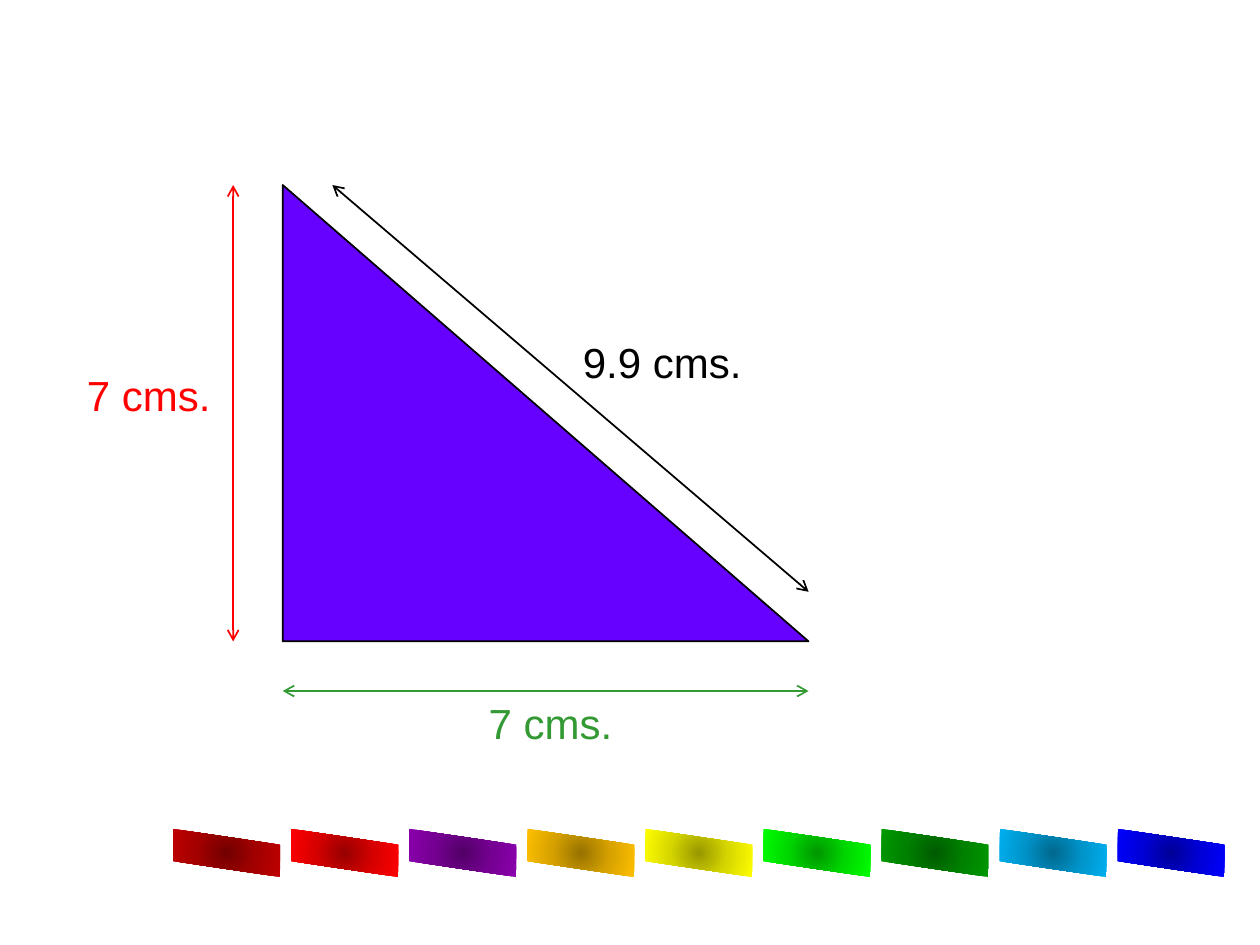
from lxml.etree import SubElement
from pptx import Presentation
from pptx.dml.color import RGBColor
from pptx.enum.shapes import MSO_CONNECTOR as CONN, MSO_SHAPE as SHAPE
from pptx.enum.text import MSO_AUTO_SIZE as AUTO
from pptx.oxml import parse_xml
from pptx.oxml.ns import nsdecls, qn
from pptx.util import Cm, Pt

COLORS = {"height": "FF0000", "base": "339933", "side": "000000",
          "triangle": "6600FF", "outline": "000000"}
# Centre, middle and edge colour of each tile
TILES = [("720000", "A20000", "C00000"), ("970000", "D70000", "FF0000"),
         ("520067", "750092", "8B00AD"), ("977200", "D7A200", "FFC000"),
         ("979700", "D7D700", "FFFF00"), ("009700", "00D700", "00FF00"),
         ("005B00", "008100", "009900"), ("00688E", "0094CA", "00B0F0"),
         ("000097", "0000D7", "0000FF")]
TILE_LEFT, TILE_TOP, TILE_PITCH = 3.49, 16.71, 2.38
TILE_WIDTH, TILE_HEIGHT, TILE_DROP = 2.16, 0.97, 0.32

LEFT, TOP, WIDTH, HEIGHT = 5.7, 3.73, 10.6, 9.2
RIGHT, BOTTOM = LEFT + WIDTH, TOP + HEIGHT
GAP = 1


def rgb(name):
    return RGBColor.from_string(COLORS[name])


def fill_radial(sp, colors):
    """Fill a shape with a gradient that runs from its centre to its edge."""
    stops = "".join(f'<a:gs pos="{i * 50000}"><a:srgbClr val="{c}"/></a:gs>'
                    for i, c in enumerate(colors))
    grad = parse_xml(
        f'<a:gradFill {nsdecls("a")} rotWithShape="1"><a:gsLst>{stops}</a:gsLst>'
        '<a:path path="circle"><a:fillToRect l="50000" t="50000" r="50000"'
        ' b="50000"/></a:path></a:gradFill>')
    sp.fill.background()
    props = sp._element.spPr
    props.replace(props.find(qn("a:noFill")), grad)


def add_tile(s, left, colors):
    right, bottom = left + TILE_WIDTH, TILE_TOP + TILE_HEIGHT - TILE_DROP
    builder = s.shapes.build_freeform(Cm(left), Cm(TILE_TOP))
    corners = [(right, TILE_TOP + TILE_DROP), (right, bottom + TILE_DROP),
               (left, bottom)]
    builder.add_line_segments([(Cm(x), Cm(y)) for x, y in corners], close=True)
    sp = builder.convert_to_shape()
    sp.shadow.inherit = False
    fill_radial(sp, colors)
    sp.line.fill.background()


def add_triangle(s):
    sp = s.shapes.add_shape(SHAPE.RIGHT_TRIANGLE, Cm(LEFT), Cm(TOP),
                            Cm(WIDTH), Cm(HEIGHT))
    sp.shadow.inherit = False
    sp.fill.solid()
    sp.fill.fore_color.rgb = rgb("triangle")
    sp.line.color.rgb = rgb("outline")
    sp.line.width = Pt(1)


def add_measure_arrow(s, color, x1, y1, x2, y2):
    line = s.shapes.add_connector(CONN.STRAIGHT, Cm(x1), Cm(y1), Cm(x2), Cm(y2))
    line.line.color.rgb = rgb(color)
    line.line.width = Pt(1)
    ln = line.line._get_or_add_ln()
    for end in ("a:headEnd", "a:tailEnd"):
        SubElement(ln, qn(end), type="arrow")
    SubElement(line._element.spPr, qn("a:effectLst"))


def add_label(s, text, color, left, top, width):
    box = s.shapes.add_textbox(Cm(left), Cm(top), Cm(width), Cm(1.27))
    tf = box.text_frame
    tf.word_wrap = True
    tf.auto_size = AUTO.SHAPE_TO_FIT_TEXT
    r = tf.paragraphs[0].add_run()
    r.text = text
    for key, value in {"name": "Arial", "size": Pt(24)}.items():
        setattr(r.font, key, value)
    r.font.color.rgb = rgb(color)


def main():
    prs = Presentation()
    prs.slide_width, prs.slide_height = Cm(25.4), Cm(19.05)
    s = prs.slides.add_slide(prs.slide_layouts[6])
    for i, colors in enumerate(TILES):
        add_tile(s, TILE_LEFT + i * TILE_PITCH, colors)
    add_measure_arrow(s, "height", LEFT - GAP, TOP, LEFT - GAP, BOTTOM)
    add_measure_arrow(s, "base", LEFT, BOTTOM + GAP, RIGHT, BOTTOM + GAP)
    add_label(s, "7 cms.", "height", 1.5, 7.32, 3.2)
    add_label(s, "7 cms.", "base", 9.6, BOTTOM + GAP, 5.9)
    add_triangle(s)
    add_measure_arrow(s, "side", LEFT + GAP, TOP, RIGHT, BOTTOM - GAP)
    add_label(s, "9.9 cms.", "side", 11.5, 6.65, 5.2)
    prs.save("out.pptx")


if __name__ == "__main__":
    main()
